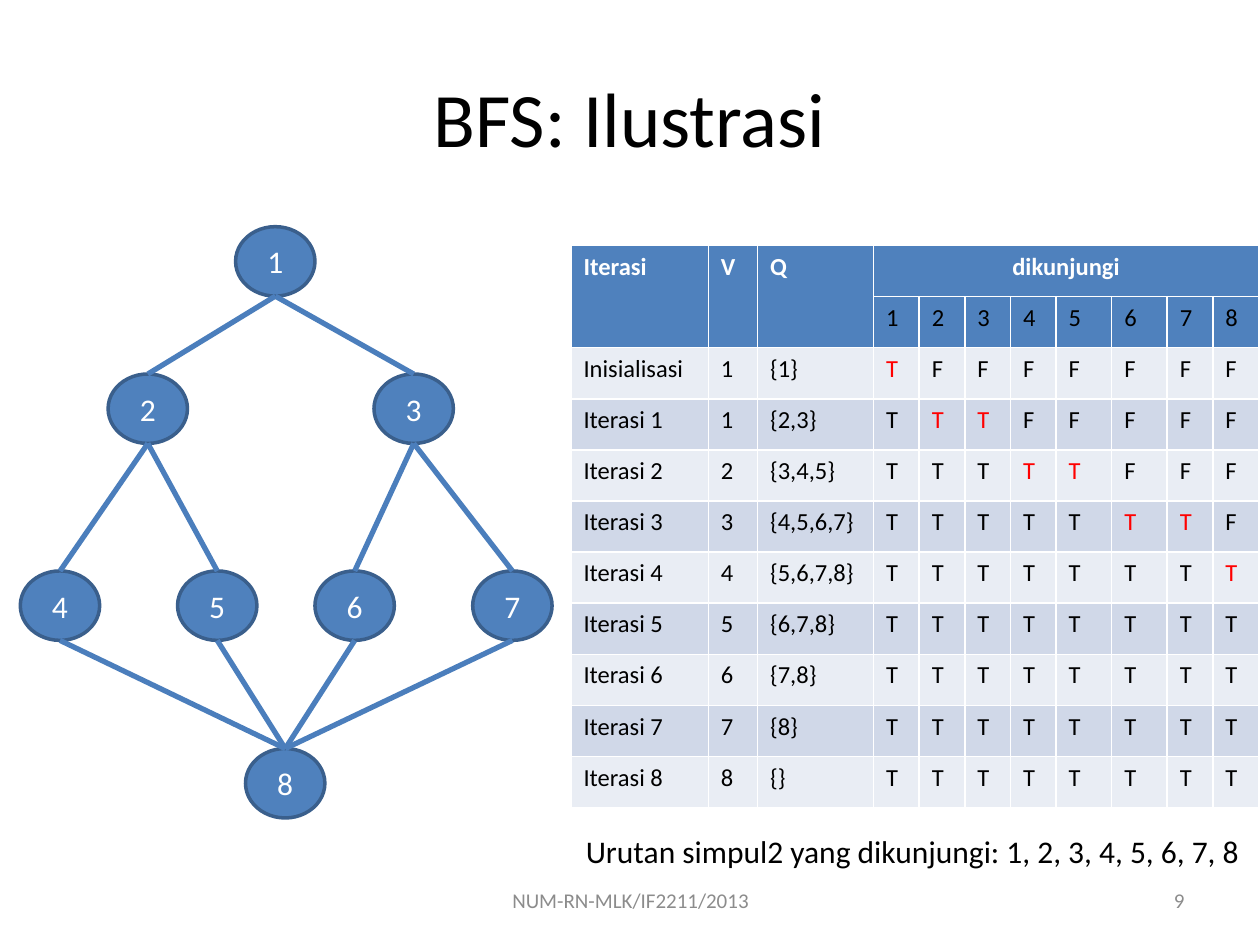
from lxml.etree import SubElement
from pptx import Presentation
from pptx.dml.color import RGBColor
from pptx.enum.shapes import MSO_CONNECTOR, MSO_SHAPE
from pptx.enum.text import MSO_ANCHOR, PP_ALIGN
from pptx.oxml.ns import qn
from pptx.util import Cm, Pt

FONT = "Calibri"
BLUE, EDGE, OUTLINE = "4F81BD", "4B7EBC", "3A5F8C"
WHITE, BLACK, RED, GREY = "FFFFFF", "000000", "FF0000", "8C8C8C"
BANDS = ("E9EDF4", "D0D8E8")

TITLE = "BFS: Ilustrasi"
NODE_W, NODE_H = 1.6, 1.4
NODES = {
    1: (4.75, 4.57),
    2: (2.18, 7.54), 3: (7.54, 7.54),
    4: (0.41, 11.51), 5: (3.58, 11.51), 6: (6.35, 11.51), 7: (9.53, 11.51),
    8: (4.95, 15.09),
}
EDGES = [(2, 4), (2, 5), (3, 6), (3, 7), (1, 2), (1, 3),
         (6, 8), (7, 8), (4, 8), (5, 8)]

HEADERS = ["Iterasi", "V", "Q", "dikunjungi"]
STEPS = [
    ("Inisialisasi", "1", "{1}", 1),
    ("Iterasi 1", "1", "{2,3}", 3),
    ("Iterasi 2", "2", "{3,4,5}", 5),
    ("Iterasi 3", "3", "{4,5,6,7}", 7),
    ("Iterasi 4", "4", "{5,6,7,8}", 8),
    ("Iterasi 5", "5", "{6,7,8}", 8),
    ("Iterasi 6", "6", "{7,8}", 8),
    ("Iterasi 7", "7", "{8}", 8),
    ("Iterasi 8", "8", "{}", 8),
]
COL_WIDTHS = [2.77, 0.99, 2.34] + [0.92] * 4 + [1.12] * 2 + [0.92] * 2
ROW_H = 1.03

LABELS = [
    ("9", (18.21, 17.65, 5.92, 1.01), 12, GREY, PP_ALIGN.RIGHT, MSO_ANCHOR.MIDDLE, True),
    ("NUM-RN-MLK/IF2211/2013", (8.69, 17.65, 8.05, 1.01), 12, GREY,
     PP_ALIGN.CENTER, MSO_ANCHOR.MIDDLE, True),
    ("Urutan simpul2 yang dikunjungi: 1, 2, 3, 4, 5, 6, 7, 8",
     (11.56, 16.64, 13.84, 1.03), 18, BLACK, PP_ALIGN.LEFT, MSO_ANCHOR.TOP, False),
]


def rgb(value):
    return RGBColor.from_string(value)


def write(tf, text, size, color, align=PP_ALIGN.LEFT, bold=False):
    p = tf.paragraphs[0]
    p.alignment = align
    r = p.add_run()
    r.text = text
    r.font.name = FONT
    r.font.size = Pt(size)
    r.font.bold = bold
    r.font.color.rgb = rgb(color)


def add_title(s):
    sp = s.shapes.title
    sp.left, sp.top, sp.width, sp.height = Cm(1.27), Cm(0.76), Cm(22.86), Cm(3.18)
    sp.text_frame.vertical_anchor = MSO_ANCHOR.MIDDLE
    write(sp.text_frame, TITLE, 44, BLACK, PP_ALIGN.CENTER)


def add_node(s, number, left, top):
    sp = s.shapes.add_shape(MSO_SHAPE.OVAL, Cm(left), Cm(top), Cm(NODE_W), Cm(NODE_H))
    sp.shadow.inherit = False
    sp.fill.solid()
    sp.fill.fore_color.rgb = rgb(BLUE)
    sp.line.color.rgb = rgb(OUTLINE)
    sp.line.width = Pt(2)
    sp.text_frame.vertical_anchor = MSO_ANCHOR.MIDDLE
    write(sp.text_frame, str(number), 18, WHITE, PP_ALIGN.CENTER)


def add_edge(s, parent, child):
    (x1, y1), (x2, y2) = NODES[parent], NODES[child]
    line = s.shapes.add_connector(
        MSO_CONNECTOR.STRAIGHT, Cm(x1 + NODE_W / 2), Cm(y1 + NODE_H),
        Cm(x2 + NODE_W / 2), Cm(y2))
    line.line.color.rgb = rgb(EDGE)
    line.line.width = Pt(3)
    SubElement(line._element.spPr, qn("a:effectLst"))


def fill_cell(cell, text, fill, color, align=PP_ALIGN.LEFT, bold=False):
    cell.fill.solid()
    cell.fill.fore_color.rgb = rgb(fill)
    write(cell.text_frame, text, 14, color, align, bold)


def add_trace(s):
    n_rows, n_cols = len(STEPS) + 2, len(COL_WIDTHS)
    table = s.shapes.add_table(n_rows, n_cols, Cm(11.51), Cm(4.95),
                               Cm(sum(COL_WIDTHS)), Cm(ROW_H * n_rows)).table
    for column, width in zip(table.columns, COL_WIDTHS):
        column.width = Cm(width)
    for row in table.rows:
        row.height = Cm(ROW_H)

    for c in range(3):
        table.cell(0, c).merge(table.cell(1, c))
    table.cell(0, 3).merge(table.cell(0, n_cols - 1))
    for c, text in enumerate(HEADERS):
        align = PP_ALIGN.CENTER if c == 3 else PP_ALIGN.LEFT
        fill_cell(table.cell(0, c), text, BLUE, WHITE, align, True)
    for node in NODES:
        fill_cell(table.cell(1, node + 2), str(node), BLUE, BLACK)

    before = 0
    for i, (*texts, visited) in enumerate(STEPS):
        fill = BANDS[i % 2]
        for c, text in enumerate(texts):
            fill_cell(table.cell(i + 2, c), text, fill, BLACK)
        for node in NODES:
            color = RED if before < node <= visited else BLACK
            fill_cell(table.cell(i + 2, node + 2), "T" if node <= visited else "F",
                      fill, color)
        before = visited


def add_label(s, text, box, size, color, align, anchor, wrap):
    tf = s.shapes.add_textbox(*map(Cm, box)).text_frame
    tf.word_wrap = wrap
    tf.vertical_anchor = anchor
    write(tf, text, size, color, align)


def main():
    prs = Presentation()
    prs.slide_width, prs.slide_height = Cm(25.4), Cm(19.05)
    s = prs.slides.add_slide(prs.slide_layouts[5])
    add_title(s)
    for number, (left, top) in NODES.items():
        add_node(s, number, left, top)
    for parent, child in EDGES:
        add_edge(s, parent, child)
    add_trace(s)
    for label in LABELS:
        add_label(s, *label)
    prs.save("out.pptx")


if __name__ == "__main__":
    main()
